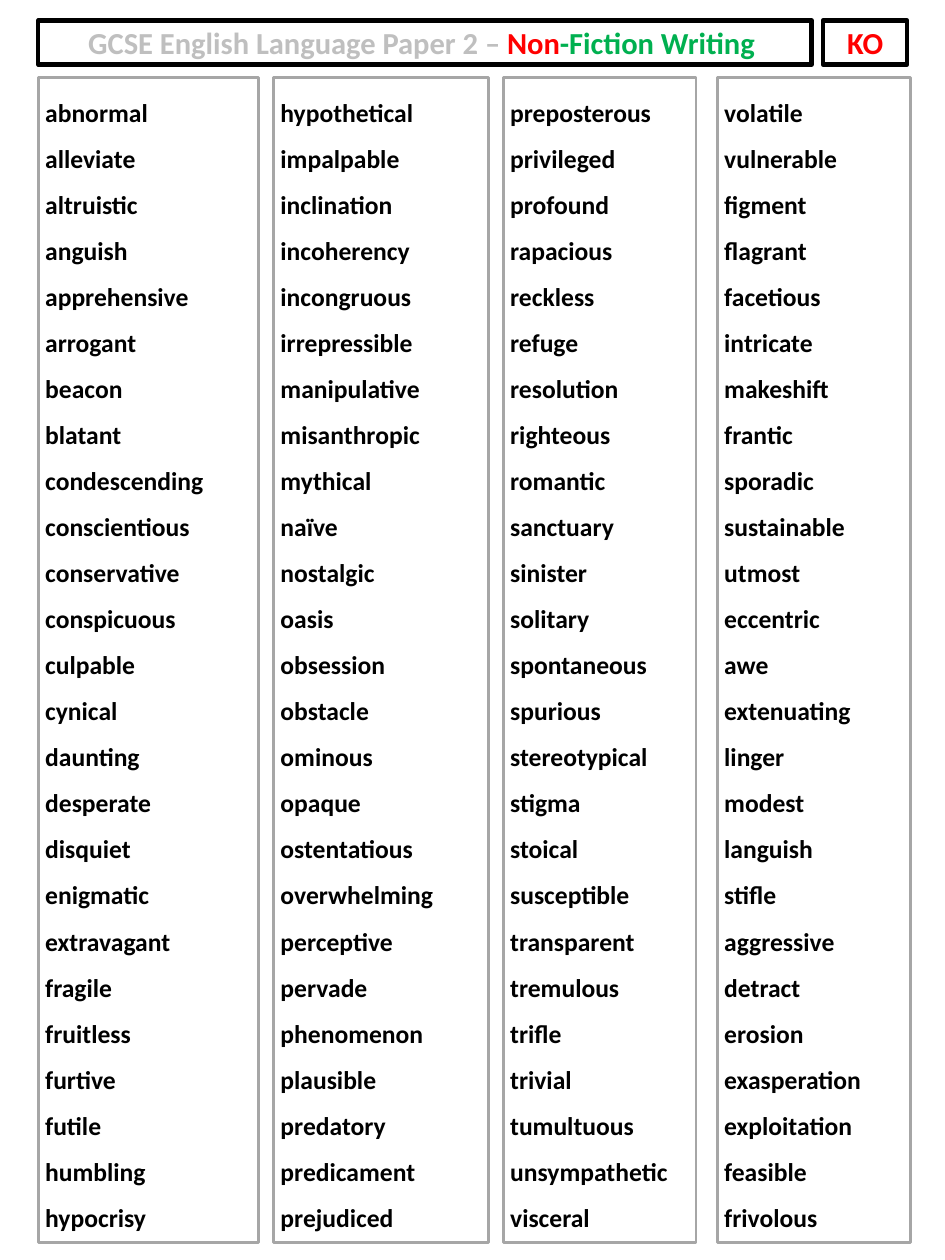
from pptx import Presentation
from pptx.dml.color import RGBColor
from pptx.enum.shapes import MSO_SHAPE
from pptx.enum.text import MSO_ANCHOR, MSO_AUTO_SIZE, PP_ALIGN
from pptx.util import Cm, Pt

RECTANGLE = MSO_SHAPE.RECTANGLE
TOP, MIDDLE = MSO_ANCHOR.TOP, MSO_ANCHOR.MIDDLE
LEFT, CENTER = PP_ALIGN.LEFT, PP_ALIGN.CENTER
NO_AUTOFIT = MSO_AUTO_SIZE.NONE

BLACK, RED, GREEN = "000000", "FF0000", "00B050"
LIGHT_GREY, MID_GREY = "BFBFBF", "A6A6A6"

TITLE_RUNS = [
    ("GCSE English Language Paper 2 – ", LIGHT_GREY),
    ("Non", RED),
    ("-Fiction Writing ", GREEN),
]
BADGE_RUNS = [("KO", RED)]

# left and width in cm, then the words from top to bottom
WORD_COLUMNS = [
    (1.37, 7.9, [
        "abnormal", "alleviate", "altruistic", "anguish", "apprehensive",
        "arrogant", "beacon", "blatant", "condescending", "conscientious",
        "conservative", "conspicuous", "culpable", "cynical", "daunting",
        "desperate", "disquiet", "enigmatic", "extravagant", "fragile",
        "fruitless", "furtive", "futile", "humbling", "hypocrisy",
    ]),
    (9.8, 7.7, [
        "hypothetical", "impalpable", "inclination", "incoherency", "incongruous",
        "irrepressible", "manipulative", "misanthropic", "mythical", "naïve",
        "nostalgic", "oasis", "obsession", "obstacle", "ominous",
        "opaque", "ostentatious", "overwhelming", "perceptive", "pervade",
        "phenomenon", "plausible", "predatory", "predicament", "prejudiced",
    ]),
    (18.03, 6.91, [
        "preposterous", "privileged", "profound", "rapacious", "reckless",
        "refuge", "resolution", "righteous", "romantic", "sanctuary",
        "sinister", "solitary", "spontaneous", "spurious", "stereotypical",
        "stigma", "stoical", "susceptible", "transparent", "tremulous",
        "trifle", "trivial", "tumultuous", "unsympathetic", "visceral",
    ]),
    (25.7, 6.91, [
        "volatile", "vulnerable", "figment", "flagrant", "facetious",
        "intricate", "makeshift", "frantic", "sporadic", "sustainable",
        "utmost", "eccentric", "awe", "extenuating", "linger",
        "modest", "languish", "stifle", "aggressive", "detract",
        "erosion", "exasperation", "exploitation", "feasible", "frivolous",
    ]),
]

HEADER_TOP, HEADER_HEIGHT = 0.74, 1.57
COLUMN_TOP, COLUMN_HEIGHT = 2.79, 41.76


def color(hex_string):
    return RGBColor.from_string(hex_string)


def format_box(shape, left, top, width, height, line_color, line_width, anchor):
    """Place an outlined, unfilled box (cm) and prepare its text frame."""
    shape.left, shape.top = Cm(left), Cm(top)
    shape.width, shape.height = Cm(width), Cm(height)
    shape.fill.background()
    shape.line.color.rgb = color(line_color)
    shape.line.width = Pt(line_width)
    frame = shape.text_frame
    frame.word_wrap = True
    frame.auto_size = NO_AUTOFIT
    frame.vertical_anchor = anchor
    frame.margin_left = frame.margin_right = Cm(0.25)
    frame.margin_top = frame.margin_bottom = Cm(0.13)


def write_paragraphs(shape, paragraphs, size, alignment, line_spacing):
    """Write paragraphs, each a list of (text, colour) runs."""
    frame = shape.text_frame
    for index, runs in enumerate(paragraphs):
        paragraph = frame.add_paragraph() if index else frame.paragraphs[0]
        paragraph.alignment = alignment
        paragraph.line_spacing = line_spacing
        for text, run_color in runs:
            run = paragraph.add_run()
            run.text = text
            run.font.name = "Calibri"
            run.font.size = Pt(size)
            run.font.bold = True
            run.font.color.rgb = color(run_color)


def add_rectangle(slide):
    shape = slide.shapes.add_shape(RECTANGLE, 0, 0, 0, 0)
    shape.shadow.inherit = False
    return shape


def main():
    presentation = Presentation()
    presentation.slide_width, presentation.slide_height = Cm(33.86), Cm(45.16)
    slide = presentation.slides.add_slide(presentation.slide_layouts[5])

    header_boxes = [
        (slide.shapes.title, 1.37, 27.71, TITLE_RUNS),
        (add_rectangle(slide), 29.49, 3.02, BADGE_RUNS),
    ]
    for shape, left, width, runs in header_boxes:
        format_box(shape, left, HEADER_TOP, width, HEADER_HEIGHT, BLACK, 4.5, MIDDLE)
        write_paragraphs(shape, [runs], 31, CENTER, 1.0)

    for left, width, words in WORD_COLUMNS:
        shape = add_rectangle(slide)
        format_box(shape, left, COLUMN_TOP, width, COLUMN_HEIGHT, MID_GREY, 3, TOP)
        paragraphs = [[(word, BLACK)] for word in words]
        write_paragraphs(shape, paragraphs, 26, LEFT, 1.5)

    presentation.save("out.pptx")


if __name__ == "__main__":
    main()
